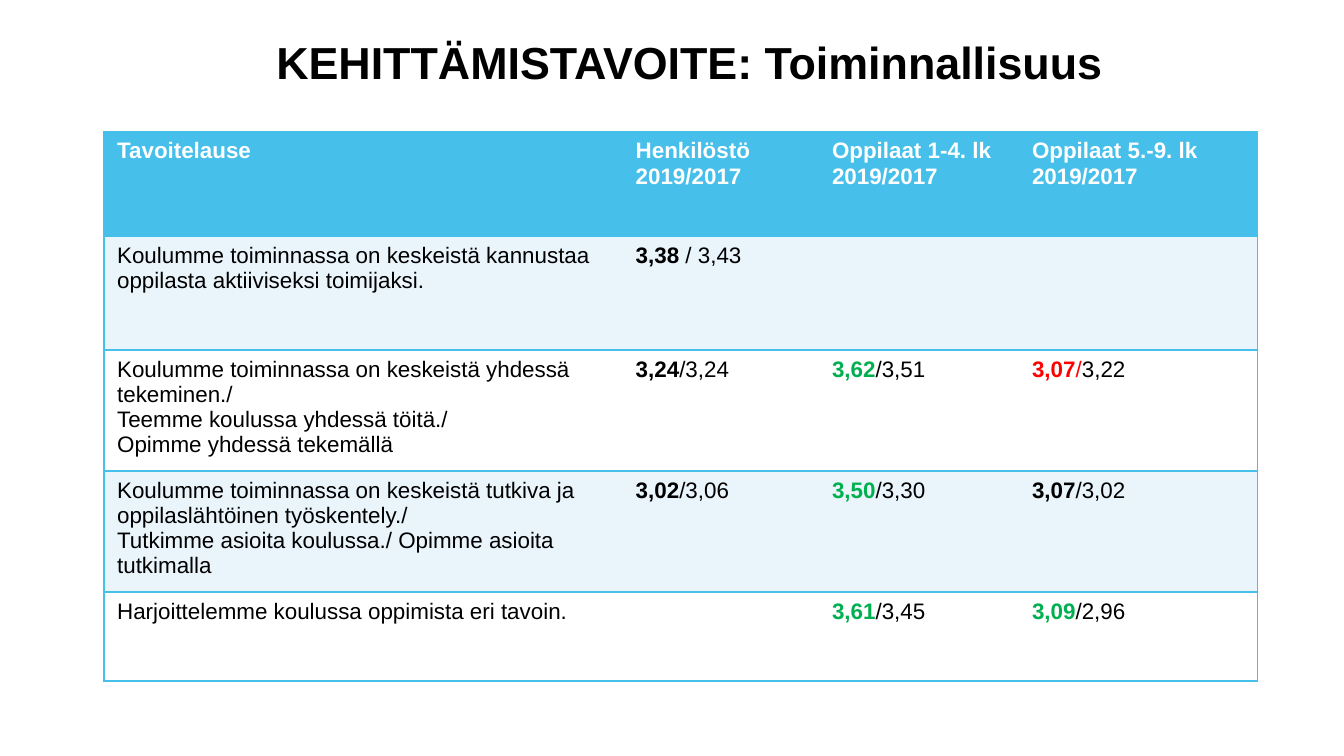
from dataclasses import dataclass
from typing import Any, Optional

import lxml.etree
import pptx
import pptx.dml.color
import pptx.enum.text
import pptx.oxml.ns
import pptx.util

Cm = pptx.util.Cm
Pt = pptx.util.Pt


@dataclass(frozen=True)
class Theme:
    font: str = "Arial"
    title_size: float = 24
    table_size: float = 12
    border_width: float = 1
    text: str = "000000"
    header_text: str = "FFFFFF"
    accent: str = "46BFEA"
    band: str = "E9F4FB"
    plain: str = "FFFFFF"
    better: str = "00B050"
    worse: str = "FF0000"


THEME = Theme()


@dataclass(frozen=True)
class Run:
    text: str
    color: str = THEME.text
    bold: bool = False


@dataclass(frozen=True)
class Score:
    current: str
    previous: str
    color: str = THEME.text
    slash: str = "/"
    slash_color: str = THEME.text

    def runs(self) -> list[Run]:
        return [
            Run(self.current, self.color, True),
            Run(self.slash, self.slash_color),
            Run(self.previous),
        ]


@dataclass(frozen=True)
class Goal:
    statements: tuple[str, ...]
    staff: Optional[Score]
    lower_grades: Optional[Score]
    upper_grades: Optional[Score]
    height: float


TITLE = "KEHITTÄMISTAVOITE: Toiminnallisuus"
YEARS = "2019/2017"
HEADERS = (
    ("Tavoitelause",),
    ("Henkilöstö", YEARS),
    ("Oppilaat 1-4. lk", YEARS),
    ("Oppilaat 5.-9. lk", YEARS),
)
COLUMN_WIDTHS = (9.8, 3.71, 3.78, 4.52)
HEADER_HEIGHT = 1.98
GOALS = (
    Goal(
        ("Koulumme toiminnassa on keskeistä kannustaa oppilasta aktiiviseksi toimijaksi.",),
        Score("3,38", "3,43", slash=" / "), None, None, 2.14,
    ),
    Goal(
        (
            "Koulumme toiminnassa on keskeistä yhdessä tekeminen./",
            "Teemme koulussa yhdessä töitä./",
            "Opimme yhdessä tekemällä",
        ),
        Score("3,24", "3,24"),
        Score("3,62", "3,51", THEME.better),
        Score("3,07", "3,22", THEME.worse, slash_color=THEME.worse),
        2.28,
    ),
    Goal(
        (
            "Koulumme toiminnassa on keskeistä tutkiva ja oppilaslähtöinen työskentely./",
            "Tutkimme asioita koulussa./ Opimme asioita tutkimalla",
        ),
        Score("3,02", "3,06"),
        Score("3,50", "3,30", THEME.better),
        Score("3,07", "3,02"),
        2.28,
    ),
    Goal(
        ("Harjoittelemme koulussa oppimista eri tavoin.",),
        None,
        Score("3,61", "3,45", THEME.better),
        Score("3,09", "2,96", THEME.better),
        1.68,
    ),
)


def rgb(color: str) -> pptx.dml.color.RGBColor:
    return pptx.dml.color.RGBColor.from_string(color)


def write_text(text_frame: Any, paragraphs: list[list[Run]], size: float) -> None:
    for index, runs in enumerate(paragraphs):
        paragraph = text_frame.paragraphs[0] if index == 0 else text_frame.add_paragraph()
        for item in runs:
            run = paragraph.add_run()
            run.text = item.text
            run.font.color.rgb = rgb(item.color)
            font_format = {"name": THEME.font, "size": Pt(size), "bold": item.bold}
            for name, value in font_format.items():
                setattr(run.font, name, value)


def set_borders(cell: Any, first: bool, last: bool) -> None:
    """Rule above and below; side lines only on the outer edges of the table."""
    qn = pptx.oxml.ns.qn
    properties = cell._tc.get_or_add_tcPr()
    sides = {"lnL": first, "lnR": last, "lnT": True, "lnB": True}
    for position, (side, visible) in enumerate(sides.items()):
        line = lxml.etree.Element(qn(f"a:{side}"), w=str(Pt(THEME.border_width)))
        if visible:
            fill = lxml.etree.SubElement(line, qn("a:solidFill"))
            lxml.etree.SubElement(fill, qn("a:srgbClr"), val=THEME.accent)
        else:
            lxml.etree.SubElement(line, qn("a:noFill"))
        properties.insert(position, line)


def add_title(slide: Any) -> None:
    shape = slide.shapes.add_textbox(Cm(1.6), Cm(0.53), Cm(22.86), Cm(1.27))
    shape.text_frame.word_wrap = True
    write_text(shape.text_frame, [[Run(TITLE, bold=True)]], THEME.title_size)
    shape.text_frame.paragraphs[0].alignment = pptx.enum.text.PP_ALIGN.CENTER


def table_contents() -> list[list[list[list[Run]]]]:
    """Rows of cells, each cell a list of paragraphs made of runs."""
    rows = [[[[Run(line, THEME.header_text, True)] for line in lines] for lines in HEADERS]]
    for goal in GOALS:
        scores = (goal.staff, goal.lower_grades, goal.upper_grades)
        rows.append(
            [[[Run(statement)] for statement in goal.statements]]
            + [[score.runs()] if score else [] for score in scores]
        )
    return rows


def add_goal_table(slide: Any) -> None:
    heights = (HEADER_HEIGHT, *(goal.height for goal in GOALS))
    table = slide.shapes.add_table(
        len(heights), len(COLUMN_WIDTHS), Cm(1.96), Cm(2.49),
        Cm(sum(COLUMN_WIDTHS)), Cm(sum(heights)),
    ).table
    table.horz_banding = False
    for column, width in zip(table.columns, COLUMN_WIDTHS):
        column.width = Cm(width)
    for row, height in zip(table.rows, heights):
        row.height = Cm(height)
    for row_index, contents in enumerate(table_contents()):
        band = THEME.band if row_index % 2 else THEME.plain
        for column_index, paragraphs in enumerate(contents):
            cell = table.cell(row_index, column_index)
            cell.fill.solid()
            cell.fill.fore_color.rgb = rgb(band if row_index else THEME.accent)
            write_text(cell.text_frame, paragraphs, THEME.table_size)
            set_borders(cell, column_index == 0, column_index == len(contents) - 1)


def main() -> None:
    presentation = pptx.Presentation()
    slide_size = {"slide_width": Cm(25.4), "slide_height": Cm(14.28)}
    for name, value in slide_size.items():
        setattr(presentation, name, value)
    slide = presentation.slides.add_slide(presentation.slide_layouts[6])
    add_title(slide)
    add_goal_table(slide)
    presentation.save("out.pptx")


if __name__ == "__main__":
    main()
